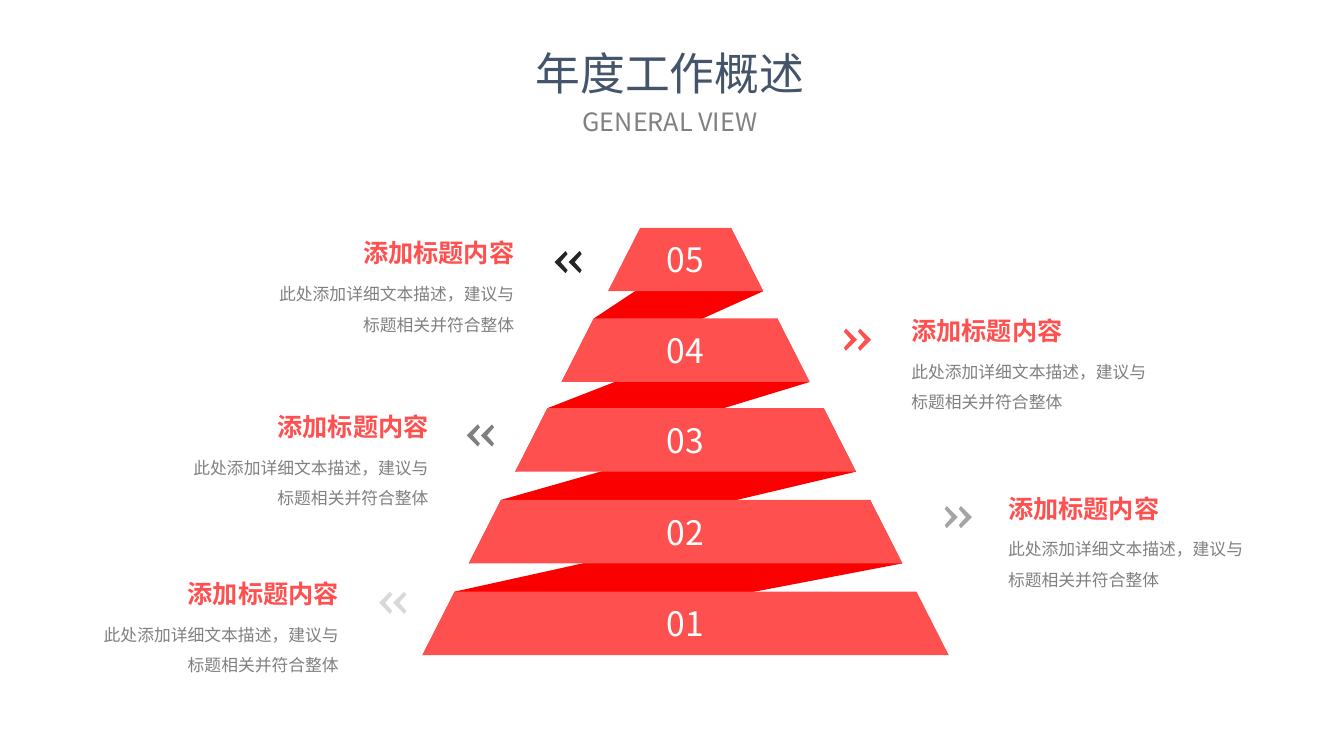
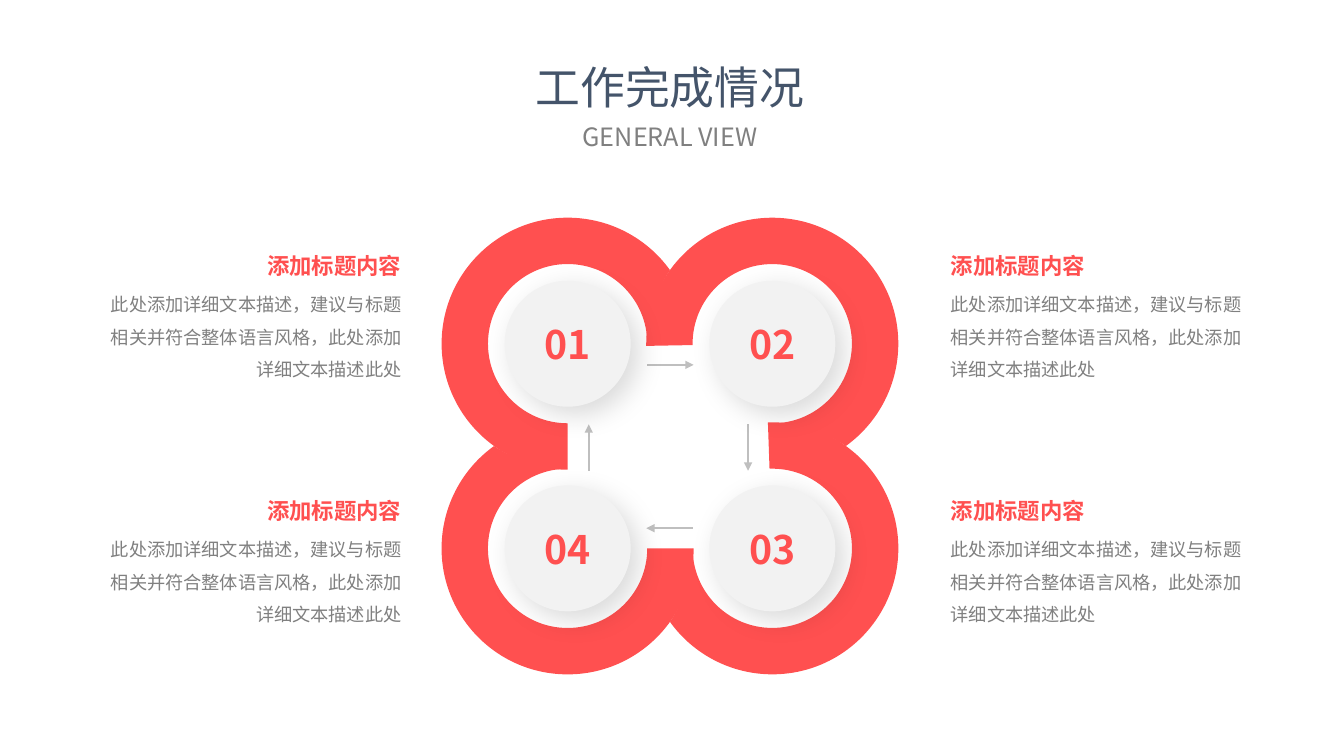
import math

import lxml.etree
import pptx
import pptx.dml.color
import pptx.enum.shapes
import pptx.enum.text
import pptx.oxml.ns
import pptx.util

Inches = pptx.util.Inches
Pt = pptx.util.Pt
ALIGN = pptx.enum.text.PP_ALIGN
SHAPES = pptx.enum.shapes.MSO_SHAPE

FONT = "Noto Sans CJK SC"
RED, DARK_RED = "FF5050", "FB0000"
NAVY, GRAY, WHITE = "44546A", "808080", "FFFFFF"
DISC_FILL, ARROW_COLOR = "F2F2F2", "BFBFBF"

SUBTITLE = "GENERAL VIEW"
CALLOUT_TITLE = "添加标题内容"

OVERVIEW_TITLE = "年度工作概述"
OVERVIEW_BODY = "此处添加详细文本描述，建议与标题相关并符合整体"
OVERVIEW_STYLE = dict(title_width=1.72, title_height=0.4, title_size=18,
                      body_width=2.57, body_height=0.67, body_size=12, body_drop=0.36)
OVERVIEW_CALLOUTS = [
    ("left", 5.2, 2.31, 5.5, "262626"),
    ("right", 8.94, 3.08, 8.37, RED),
    ("left", 4.35, 4.03, 4.63, "7F7F7F"),
    ("right", 9.9, 4.84, 9.37, "A5A5A5"),
    ("left", 3.46, 5.69, 3.76, "D8D8D8"),
]
BANDS = [("05", 2.26), ("04", 3.16), ("03", 4.05), ("02", 4.96), ("01", 5.87)]
BAND_CENTER, BAND_HEIGHT = 6.8, 0.63
BAND_HALF_WIDTH, BAND_GROWTH, BAND_SLANT = 0.77, 0.46, 0.32
CHEVRON_WIDTH, CHEVRON_DROP = 0.27, 0.18
CHEVRON_POINTS = [(0.14, 0.19), (0.16, 0.22), (0.27, 0.11),
                  (0.16, 0), (0.14, 0.03), (0.21, 0.11)]

PROGRESS_TITLE = "工作完成情况"
PROGRESS_BODY = "此处添加详细文本描述，建议与标题相关并符合整体语言风格，此处添加详细文本描述此处"
PROGRESS_STYLE = dict(title_width=1.35, title_height=0.27, title_size=16,
                      body_width=3.05, body_height=0.95, body_size=13, body_drop=0.3,
                      margin=0, space_before=29.5)
PROGRESS_CALLOUTS = [(side, edge, top) for side, edge in (("right", 9.43), ("left", 3.98))
                     for top in (2.5, 4.93)]
DISCS = [("01", 5.63, 3.41), ("02", 7.66, 3.41), ("03", 7.66, 5.44), ("04", 5.63, 5.44)]
PETAL_LAPS = [0, 1, 2, 0]
OUTER_RADIUS, INNER_RADIUS, DISC_DIAMETER, SEAM = 1.25, 0.79, 1.25, 0.01
ARROWS = [
    (6.42, 3.62, 6.88, 3.62),
    (6.87, 5.24, 6.41, 5.24),
    (7.42, 4.21, 7.42, 4.67),
    (5.84, 4.67, 5.84, 4.21),
]


def color(value):
    return pptx.dml.color.RGBColor.from_string(value)


def add_xml(parent, tag, **attributes):
    return lxml.etree.SubElement(parent, pptx.oxml.ns.qn(tag), **attributes)


def write_text(frame, text, size=12, text_color=GRAY, bold=False, align=ALIGN.LEFT,
               line_spacing=None, space_before=None):
    paragraph = frame.paragraphs[0]
    paragraph.alignment = align
    if line_spacing:
        paragraph.line_spacing = line_spacing
    if space_before:
        paragraph.space_before = Pt(space_before)
    run = paragraph.add_run()
    run.text = text
    run.font.size = Pt(size)
    run.font.bold = bold
    run.font.name = FONT
    run.font.color.rgb = color(text_color)
    add_xml(run._r.get_or_add_rPr(), "a:ea", typeface=FONT)


def add_text(slide, text, left, top, width, height, wrap=True, margin=None, **text_format):
    box = slide.shapes.add_textbox(Inches(left), Inches(top), Inches(width), Inches(height))
    frame = box.text_frame
    frame.word_wrap = wrap
    frame.auto_size = pptx.enum.text.MSO_AUTO_SIZE.SHAPE_TO_FIT_TEXT
    if margin is not None:
        frame.margin_left = frame.margin_right = Inches(margin)
        frame.margin_top = frame.margin_bottom = Inches(margin)
    write_text(frame, text, **text_format)


def paint(shape, fill):
    shape.shadow.inherit = False
    shape.fill.solid()
    shape.fill.fore_color.rgb = color(fill)
    shape.line.fill.background()


def label_shape(shape, text, **text_format):
    shape.text_frame.vertical_anchor = pptx.enum.text.MSO_ANCHOR.MIDDLE
    write_text(shape.text_frame, text, align=ALIGN.CENTER, **text_format)


def add_outline(slide, fill, *contours):
    contours = [[(Inches(x), Inches(y)) for x, y in contour] for contour in contours]
    builder = slide.shapes.build_freeform(*contours[0][0])
    builder.add_line_segments(contours[0][1:], close=True)
    for contour in contours[1:]:
        builder.move_to(*contour[0])
        builder.add_line_segments(contour[1:], close=True)
    shape = builder.convert_to_shape()
    paint(shape, fill)
    return shape


def bend_outline(shape):
    segments = list(shape._element.iter(pptx.oxml.ns.qn("a:lnTo")))
    for first in range(0, len(segments) - 2, 3):
        triple = segments[first:first + 3]
        curve = lxml.etree.Element(pptx.oxml.ns.qn("a:cubicBezTo"))
        triple[0].addprevious(curve)
        for segment in triple:
            curve.append(segment[0])
            segment.getparent().remove(segment)


def add_heading(slide, title, top):
    add_text(slide, title, 5.05, top, 3.19, 0.64, size=32, text_color=NAVY, align=ALIGN.CENTER)
    add_text(slide, SUBTITLE, 5.05, top + 0.61, 3.19, 0.4, size=18, align=ALIGN.CENTER)


def add_callout(slide, side, edge, top, body, title_width, title_height, title_size,
                body_width, body_height, body_size, body_drop, margin=None, space_before=None):
    on_left = side == "left"
    align = ALIGN.RIGHT if on_left else ALIGN.LEFT
    add_text(slide, CALLOUT_TITLE, edge - title_width * on_left, top, title_width, title_height,
             wrap=False, margin=margin, size=title_size, text_color=RED, bold=True, align=align)
    add_text(slide, body, edge - body_width * on_left, top + body_drop, body_width, body_height,
             margin=margin, size=body_size, align=align, line_spacing=1.5,
             space_before=space_before)


def band_corners(index, top):
    bottom = top + BAND_HEIGHT
    half = BAND_HALF_WIDTH + index * BAND_GROWTH
    left, right = BAND_CENTER - half, BAND_CENTER + half
    return [(left + BAND_SLANT, top), (right - BAND_SLANT, top), (right, bottom), (left, bottom)]


def add_pyramid(slide):
    outlines = [band_corners(index, top) for index, (label, top) in enumerate(BANDS)]
    for upper, lower in reversed(list(zip(outlines, outlines[1:]))):
        add_outline(slide, DARK_RED, [lower[3], upper[2], upper[1], lower[0]])
    for (label, top), corners in zip(BANDS, outlines):
        band = add_outline(slide, RED, corners)
        label_shape(band, label, size=24, text_color=WHITE)


def add_chevrons(slide, side, left, top, fill):
    contours = []
    for shift in (0, -0.14):
        points = [(x + shift, y) for x, y in CHEVRON_POINTS]
        if side == "left":
            points = [(CHEVRON_WIDTH - x, y) for x, y in points]
        contours.append([(left + x, top + y) for x, y in points])
    add_outline(slide, fill, *contours)


def circle_point(center, radius, degrees):
    angle = math.radians(degrees)
    return center[0] + radius * math.cos(angle), center[1] + radius * math.sin(angle)


def arc(center, radius, start, end):
    low, high = sorted((start, end))
    quarters = [angle for angle in range(0, 721, 90) if low < angle < high]
    stops = sorted([start, *quarters, end], reverse=start > end)
    points = []
    for begin, finish in zip(stops, stops[1:]):
        reach = 4 / 3 * math.tan(math.radians(finish - begin) / 4)
        x1, y1 = circle_point(center, radius, begin)
        x2, y2 = circle_point(center, radius, finish)
        points += [(x1 - reach * (y1 - center[1]), y1 + reach * (x1 - center[0])),
                   (x2 + reach * (y2 - center[1]), y2 - reach * (x2 - center[0])),
                   (x2, y2)]
    return points


def add_petals(slide):
    centers = [disc[1:] for disc in DISCS]
    for index, center in enumerate(centers):
        following = (index + 1) % len(centers)
        neighbor = centers[following]
        turn = 90 * index
        start = turn + 90 - PETAL_LAPS[index]
        meeting = math.degrees(math.acos(math.dist(center, neighbor) / 2 / OUTER_RADIUS))
        outer = arc(center, OUTER_RADIUS, start, turn + 360 - meeting)
        shared = arc(neighbor, OUTER_RADIUS - SEAM, turn + 180 + meeting,
                     turn + 180 - PETAL_LAPS[following])
        inner_start = circle_point(center, INNER_RADIUS, turn + 360)
        inner = arc(center, INNER_RADIUS, turn + 360, start)
        petal = add_outline(slide, RED, [circle_point(center, OUTER_RADIUS, start)]
                            + outer + shared + [shared[-1], inner_start, inner_start] + inner)
        bend_outline(petal)


def add_arrow(slide, *ends):
    connector = slide.shapes.add_connector(pptx.enum.shapes.MSO_CONNECTOR.STRAIGHT,
                                           *map(Inches, ends))
    connector.line.color.rgb = color(ARROW_COLOR)
    connector.line.width = Pt(1.5)
    add_xml(connector.line._get_or_add_ln(), "a:tailEnd", type="triangle")
    add_xml(connector._element.spPr, "a:effectLst")


def add_disc(slide, label, x, y):
    disc = slide.shapes.add_shape(SHAPES.OVAL, Inches(x - DISC_DIAMETER / 2),
                                  Inches(y - DISC_DIAMETER / 2),
                                  Inches(DISC_DIAMETER), Inches(DISC_DIAMETER))
    paint(disc, DISC_FILL)
    effects = disc._element.spPr.find(pptx.oxml.ns.qn("a:effectLst"))
    shadow = add_xml(effects, "a:outerShdw", blurRad=str(Pt(20)), dist=str(Pt(8)),
                     dir="2700000", algn="tl", rotWithShape="0")
    shade = add_xml(shadow, "a:srgbClr", val="000000")
    add_xml(shade, "a:alpha", val="15000")
    label_shape(disc, label, size=28, text_color=RED, bold=True)


def build_overview(slide):
    add_pyramid(slide)
    for side, edge, top, chevron_left, fill in OVERVIEW_CALLOUTS:
        add_chevrons(slide, side, chevron_left, top + CHEVRON_DROP, fill)
        add_callout(slide, side, edge, top, OVERVIEW_BODY, **OVERVIEW_STYLE)
    add_heading(slide, OVERVIEW_TITLE, 0.4)


def build_progress(slide):
    add_petals(slide)
    for ends in ARROWS:
        add_arrow(slide, *ends)
    for disc in DISCS:
        add_disc(slide, *disc)
    add_heading(slide, PROGRESS_TITLE, 0.54)
    for side, edge, top in PROGRESS_CALLOUTS:
        add_callout(slide, side, edge, top, PROGRESS_BODY, **PROGRESS_STYLE)


def main():
    presentation = pptx.Presentation()
    presentation.slide_width = Inches(13.33)
    presentation.slide_height = Inches(7.5)
    for build in (build_overview, build_progress):
        build(presentation.slides.add_slide(presentation.slide_layouts[6]))
    presentation.save("out.pptx")


if __name__ == "__main__":
    main()
